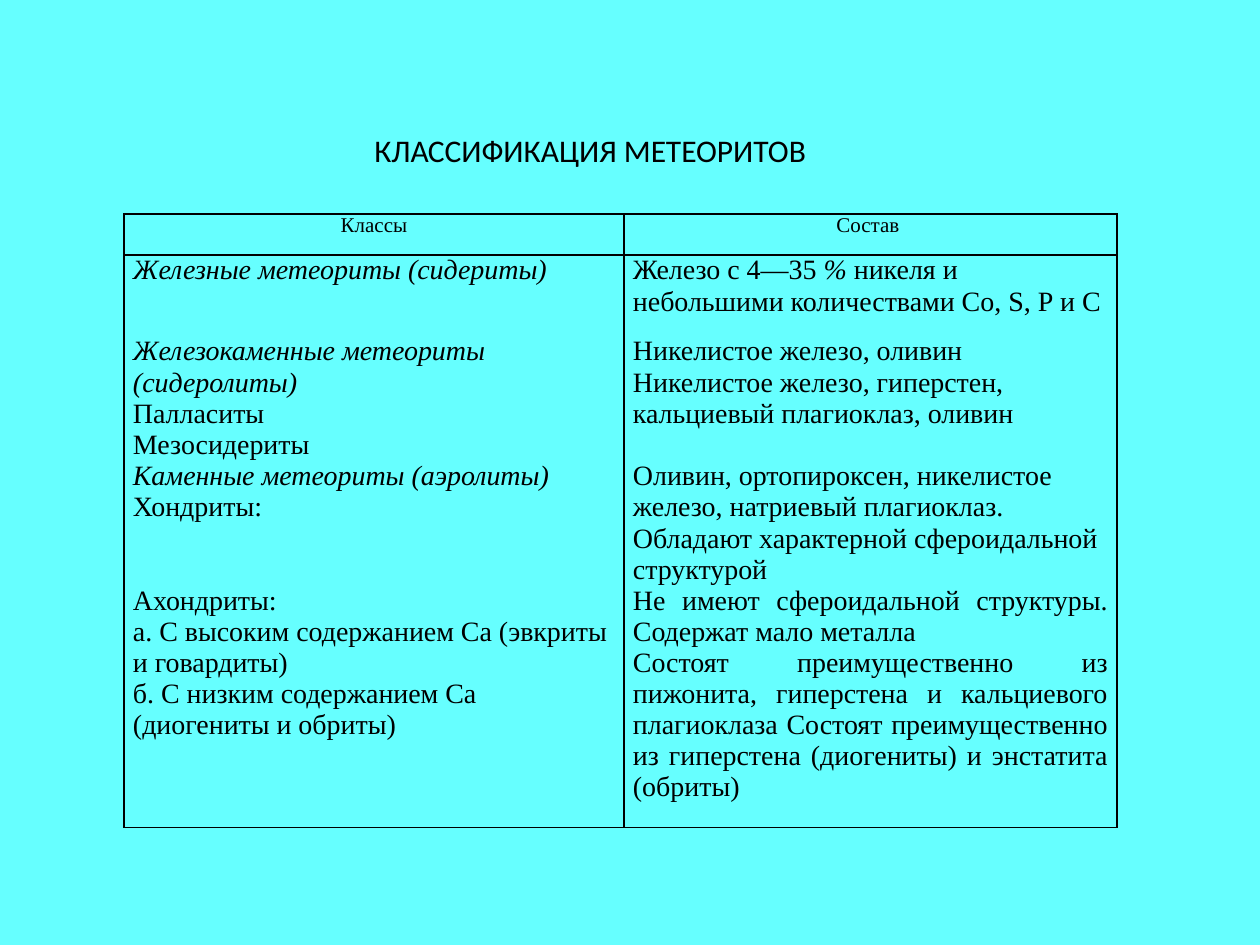
from lxml import etree
from pptx import Presentation
from pptx.dml.color import RGBColor
from pptx.enum.text import MSO_AUTO_SIZE, PP_ALIGN
from pptx.oxml.ns import qn
from pptx.util import Emu, Pt

LEFT, CENTER, JUSTIFY = PP_ALIGN.LEFT, PP_ALIGN.CENTER, PP_ALIGN.JUSTIFY
FIT_SHAPE = MSO_AUTO_SIZE.SHAPE_TO_FIT_TEXT
BACKGROUND, INK = "66FFFF", "000000"
TITLE = "КЛАССИФИКАЦИЯ МЕТЕОРИТОВ"
TITLE_BOX = (362, 125, 476, 50)
TABLE_ORIGIN = (124, 214)
COL_WIDTHS = (500, 493)
ROW_HEIGHTS = (41, 81, 125, 124, 242)
INSET = 9

# Each cell lists paragraphs; each paragraph lists (text, italic) runs.
ROWS = [
    ([[("Классы", False)]],
     [[("Состав ", False)]]),
    ([[("Железные метеориты (сидериты)", True)]],
     [[("Железо с 4—35 ", False), ("% ", True),
       ("никеля и небольшими количествами Со, S, Р и С", False)]]),
    ([[("Железокаменные метеориты (сидеролиты)", True)],
      [("Палласиты", False)],
      [("Мезосидериты", False)]],
     [[("Никелистое железо, оливин Никелистое железо, гиперстен, "
        "кальциевый плагиоклаз, оливин", False)]]),
    ([[("Каменные метеориты (аэролиты)", True)],
      [("Хондриты:", False)]],
     [[("Оливин, ортопироксен, никелистое железо, натриевый плагиоклаз. "
        "Обладают характерной сфероидальной структурой", False)]]),
    ([[("Ахондриты:", False)],
      [("а. С высоким содержанием Са (эвкриты и говардиты)", False)],
      [("б. С низким содержанием Са (диогениты и обриты)", False)]],
     [[("Не имеют сфероидальной структуры. Содержат мало металла ", False)],
      [("Состоят преимущественно из пижонита, гиперстена и кальциевого "
        "плагиоклаза Состоят преимущественно из гиперстена (диогениты) "
        "и энстатита (обриты)", False)]]),
]


def px(n):
    return Emu(n * 914400 // 126)


def color(value):
    return RGBColor.from_string(value)


def set_font(font, name, size):
    font.name = name
    font.size = Pt(size)
    font.bold = False
    font.color.rgb = color(INK)


def set_borders(cell, visible):
    tc_pr = cell._tc.get_or_add_tcPr()
    for i, side in enumerate("LRTB"):
        ln = etree.Element(qn(f"a:ln{side}"), w=str(Pt(1)))
        if side in visible:
            fill = etree.SubElement(ln, qn("a:solidFill"))
            etree.SubElement(fill, qn("a:srgbClr"), val=INK)
        else:
            etree.SubElement(ln, qn("a:noFill"))
        tc_pr.insert(i, ln)


def fill_cell(cell, paragraphs, size, align):
    cell.fill.background()
    cell.margin_left = cell.margin_right = px(INSET)
    cell.margin_top = cell.margin_bottom = 0
    tf = cell.text_frame
    for i, runs in enumerate(paragraphs):
        p = tf.add_paragraph() if i else tf.paragraphs[0]
        p.alignment = align
        set_font(p.font, "Times New Roman", size)
        for text, italic in runs:
            r = p.add_run()
            r.text = text
            r.font.italic = italic
            set_font(r.font, "Times New Roman", size)


def add_classes(s):
    table = s.shapes.add_table(
        len(ROWS), len(COL_WIDTHS), *map(px, TABLE_ORIGIN),
        px(sum(COL_WIDTHS)), px(sum(ROW_HEIGHTS))).table
    table.first_row = table.horz_banding = False
    for column, width in zip(table.columns, COL_WIDTHS):
        column.width = px(width)
    last = len(ROWS) - 1
    for i, (cells, height) in enumerate(zip(ROWS, ROW_HEIGHTS)):
        table.rows[i].height = px(height)
        visible = "LR" + "T" * (i < 2) + "B" * (i in (0, last))
        for j, paragraphs in enumerate(cells):
            cell = table.cell(i, j)
            align = CENTER if i == 0 else JUSTIFY if (i, j) == (last, 1) else LEFT
            fill_cell(cell, paragraphs, 16 if i else 12, align)
            set_borders(cell, visible)


def add_title(s):
    tf = s.shapes.add_textbox(*map(px, TITLE_BOX)).text_frame
    tf.word_wrap = True
    tf.auto_size = FIT_SHAPE
    p = tf.paragraphs[0]
    p.text = TITLE
    set_font(p.font, "Calibri", 18)


def main():
    prs = Presentation()
    prs.slide_width, prs.slide_height = px(1260), px(945)
    s = prs.slides.add_slide(prs.slide_layouts[6])
    s.background.fill.solid()
    s.background.fill.fore_color.rgb = color(BACKGROUND)
    add_classes(s)
    add_title(s)
    prs.save("out.pptx")


if __name__ == "__main__":
    main()
